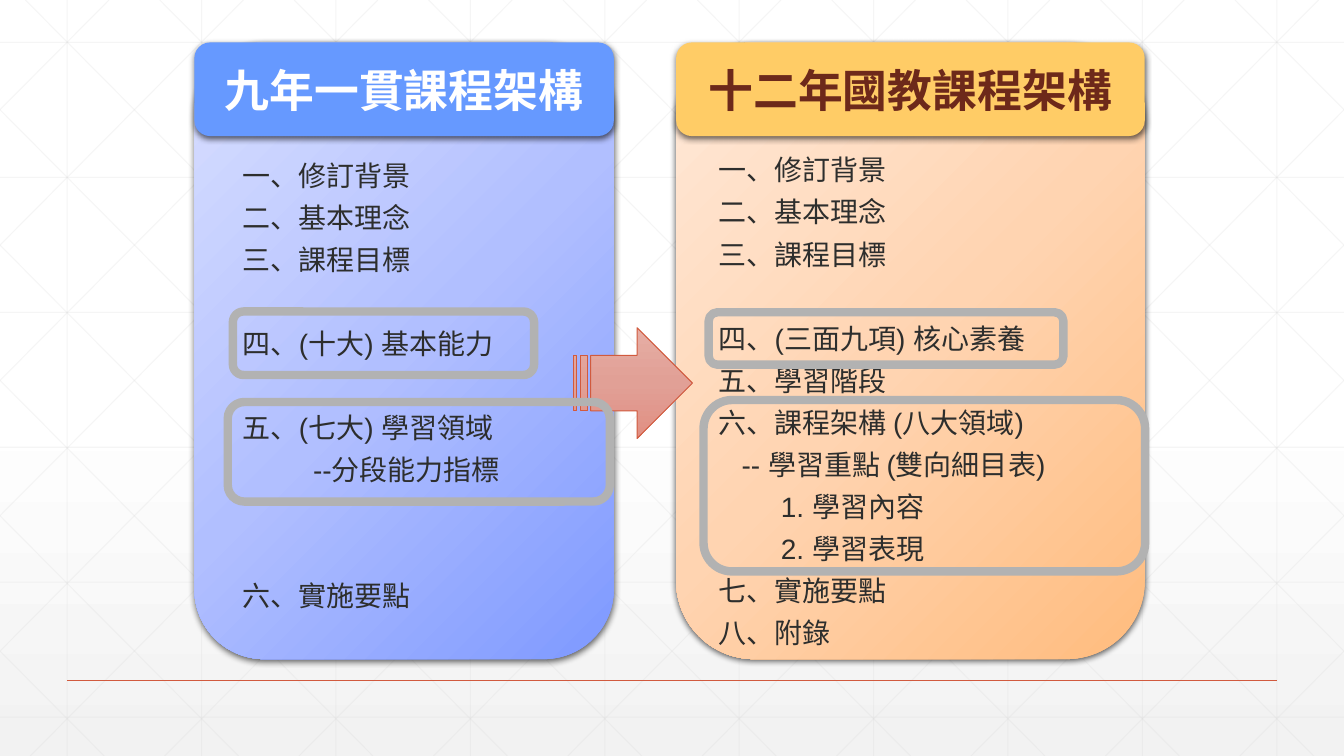
from lxml import etree
from pptx import Presentation
from pptx.dml.color import RGBColor
from pptx.enum.shapes import MSO_CONNECTOR, MSO_SHAPE
from pptx.enum.text import MSO_ANCHOR, PP_ALIGN
from pptx.oxml.ns import qn
from pptx.util import Cm, Pt

STRAIGHT = MSO_CONNECTOR.STRAIGHT
ROUNDED = MSO_SHAPE.ROUNDED_RECTANGLE
STRIPED_ARROW = MSO_SHAPE.STRIPED_RIGHT_ARROW
MIDDLE, TOP = MSO_ANCHOR.MIDDLE, MSO_ANCHOR.TOP
CENTER, LEFT = PP_ALIGN.CENTER, PP_ALIGN.LEFT

WHITE = RGBColor(0xFF, 0xFF, 0xFF)
PALE_GREY = RGBColor(0xF2, 0xF2, 0xF2)
MESH_GREY = RGBColor(0xD8, 0xD8, 0xD8)
FRAME_GREY = RGBColor(0xB2, 0xB2, 0xB2)
INK = RGBColor(0x2D, 0x2E, 0x2D)
RUST = RGBColor(0xD1, 0x5A, 0x3E)
BROWN = RGBColor(0x6D, 0x29, 0x1A)
BLUE = RGBColor(0x66, 0x99, 0xFF)
GOLD = RGBColor(0xFF, 0xCC, 0x66)
BLACK = RGBColor(0, 0, 0)
BLUE_BLEND = [(0, RGBColor(0x7E, 0x99, 0xFF)), (50, RGBColor(0xB1, 0xBF, 0xFF)),
              (100, RGBColor(0xD9, 0xDF, 0xFF))]
ORANGE_BLEND = [(0, RGBColor(0xFF, 0xBC, 0x7E)), (50, RGBColor(0xFF, 0xD4, 0xB1)),
                (100, RGBColor(0xFF, 0xE9, 0xD9))]
ROSE_BLEND = [(0, RGBColor(0xE6, 0xAD, 0xA4)), (50, RGBColor(0xE1, 0xA0, 0x96)),
              (100, RGBColor(0xE1, 0x8F, 0x83))]
PAGE_BLEND = [(0, WHITE), (53, WHITE), (100, PALE_GREY)]

WIDTH, HEIGHT = 33.87, 19.05
MESH_STEP = WIDTH / 10
PANEL_TOP, PANEL_HEIGHT, HEADER_HEIGHT = 1.07, 15.54, 2.36
LINE_HEIGHT, LINE_GAP = 24, 6


def add_color(parent, color, opacity=100):
    node = etree.SubElement(parent, qn("a:srgbClr"), val=str(color))
    if opacity < 100:
        etree.SubElement(node, qn("a:alpha"), val=str(opacity * 1000))


class Board:
    """Draws on one slide; lengths are centimetres, text sizes points."""

    font = "Arial"

    def __init__(self, slide):
        self.slide = slide
        self.shapes = slide.shapes

    def blend(self, fill, owner, stops, angle):
        """Fill with colour stops running clockwise at the given angle."""
        fill.gradient()
        fill.gradient_angle = 360 - angle
        stop_list = next(owner.iter(qn("a:gsLst")))
        for stop in list(stop_list):
            stop_list.remove(stop)
        for position, color in stops:
            stop = etree.SubElement(stop_list, qn("a:gs"), pos=str(position * 1000))
            add_color(stop, color)

    def background(self, stops):
        self.blend(self.slide.background.fill, self.slide.element, stops, 90)

    def line(self, x1, y1, x2, y2, color, width, opacity=100):
        line = self.shapes.add_connector(STRAIGHT, Cm(x1), Cm(y1), Cm(x2), Cm(y2))
        line.line.color.rgb = color
        line.line.width = Pt(width)
        properties = line.element.spPr
        etree.SubElement(properties, qn("a:effectLst"))
        if opacity < 100:
            solid = next(properties.iter(qn("a:solidFill")))
            solid.remove(solid[0])
            add_color(solid, color, opacity)

    def shape(self, kind, box, fill=None, angle=90, outline=None, width=0.75):
        """fill is None, one colour or a list of gradient stops."""
        shape = self.shapes.add_shape(kind, *map(Cm, box))
        shape.shadow.inherit = False
        if fill is None:
            shape.fill.background()
        elif isinstance(fill, list):
            self.blend(shape.fill, shape.element, fill, angle)
        else:
            shape.fill.solid()
            shape.fill.fore_color.rgb = fill
        if outline is None:
            shape.line.fill.background()
        else:
            shape.line.color.rgb = outline
            shape.line.width = Pt(width)
        return shape

    def raised(self, box, fill):
        """Rounded block with a soft shadow below it."""
        block = self.shape(ROUNDED, box, fill, angle=225)
        effects = block.element.spPr.find(qn("a:effectLst"))
        shadow = etree.SubElement(effects, qn("a:outerShdw"), blurRad=str(Pt(4.5)),
                                  dist=str(Pt(1.5)), dir="5400000", rotWithShape="0")
        add_color(shadow, BLACK, 62)
        return block

    def set_text(self, paragraph, text, size, color, bold=False, align=LEFT):
        paragraph.text = text
        paragraph.alignment = align
        font = paragraph.font
        font.name, font.size, font.bold = self.font, Pt(size), bold
        font.color.rgb = color

    def header(self, box, fill, title, color):
        frame = self.raised(box, fill).text_frame
        frame.vertical_anchor = MIDDLE
        self.set_text(frame.paragraphs[0], title, 32, color, bold=True, align=CENTER)

    def outline_list(self, box, entries):
        """entries hold text, left indent and the number of lines left open above."""
        frame = self.shapes.add_textbox(*map(Cm, box)).text_frame
        frame.word_wrap = True
        frame.vertical_anchor = TOP
        for index, (text, indent, skipped) in enumerate(entries):
            entry = frame.add_paragraph() if index else frame.paragraphs[0]
            self.set_text(entry, text, 20, INK)
            entry.line_spacing = Pt(LINE_HEIGHT)
            if index:
                entry.space_before = Pt(LINE_GAP + skipped * (LINE_HEIGHT + LINE_GAP))
            entry._p.get_or_add_pPr().set("marL", str(Cm(indent)))

    def mesh(self):
        def thread(*ends):
            self.line(*ends, MESH_GREY, 0.75, opacity=24)

        for column in range(10):
            x = (column + 0.5) * MESH_STEP
            thread(x, 0, x, HEIGHT)
        for row in range(6):
            y = 1.07 + 3.4 * row
            thread(0, y, WIDTH, y)
        slope = HEIGHT / 18.92
        for diagonal in range(-5, 10):
            start = 0.64 + diagonal * MESH_STEP
            x1, x2 = max(start, 0), min(start + 18.92, WIDTH)
            y1, y2 = (x1 - start) * slope, (x2 - start) * slope
            thread(x1, y1, x2, y2)
            thread(WIDTH - x1, y1, WIDTH - x2, y2)


NINE_YEAR = [
    ("一、修訂背景", 0, 0), ("二、基本理念", 0, 0), ("三、課程目標", 0, 0),
    ("四、(十大) 基本能力", 0, 1), ("五、(七大) 學習領域", 0, 1),
    ("--分段能力指標", 1.77, 0), ("六、實施要點", 0, 2),
]
TWELVE_YEAR = [
    ("一、修訂背景", 0, 0), ("二、基本理念", 0, 0), ("三、課程目標", 0, 0),
    ("四、(三面九項) 核心素養", 0, 1), ("五、學習階段", 0, 0),
    ("六、課程架構 (八大領域)", 0, 0), ("-- 學習重點 (雙向細目表)", 0.58, 0),
    ("1. 學習內容", 1.57, 0), ("2. 學習表現", 1.57, 0),
    ("七、實施要點", 0, 0), ("八、附錄", 0, 0),
]
# left, width, body fill, header fill, title, title colour, list box, entries
CURRICULA = [
    (4.9, 10.57, BLUE_BLEND, BLUE, "九年一貫課程架構", WHITE,
     (5.87, 3.86, 9.5, 11.79), NINE_YEAR),
    (17.04, 11.81, ORANGE_BLEND, GOLD, "十二年國教課程架構", BROWN,
     (17.86, 3.73, 10.77, 12.85), TWELVE_YEAR),
]
HIGHLIGHTS = [
    (5.87, 7.85, 7.59, 1.6), (17.86, 7.87, 8.94, 1.32),
    (5.74, 10.13, 9.63, 2.51), (17.73, 10.08, 11.13, 4.32),
]


def main():
    deck = Presentation()
    deck.slide_width, deck.slide_height = Cm(WIDTH), Cm(HEIGHT)
    board = Board(deck.slides.add_slide(deck.slide_layouts[6]))
    board.background(PAGE_BLEND)
    board.mesh()
    board.line(1.69, 17.15, 32.17, 17.15, RUST, 1)
    for left, width, body, cap, title, title_color, list_box, entries in CURRICULA:
        board.raised((left, PANEL_TOP, width, PANEL_HEIGHT), body)
        board.header((left, PANEL_TOP, width, HEADER_HEIGHT), cap, title, title_color)
        board.outline_list(list_box, entries)
    board.shape(STRIPED_ARROW, (14.45, 8.26, 3, 2.79), ROSE_BLEND, outline=RUST)
    for box in HIGHLIGHTS:
        board.shape(ROUNDED, box, outline=FRAME_GREY, width=6)
    deck.save("out.pptx")


if __name__ == "__main__":
    main()
